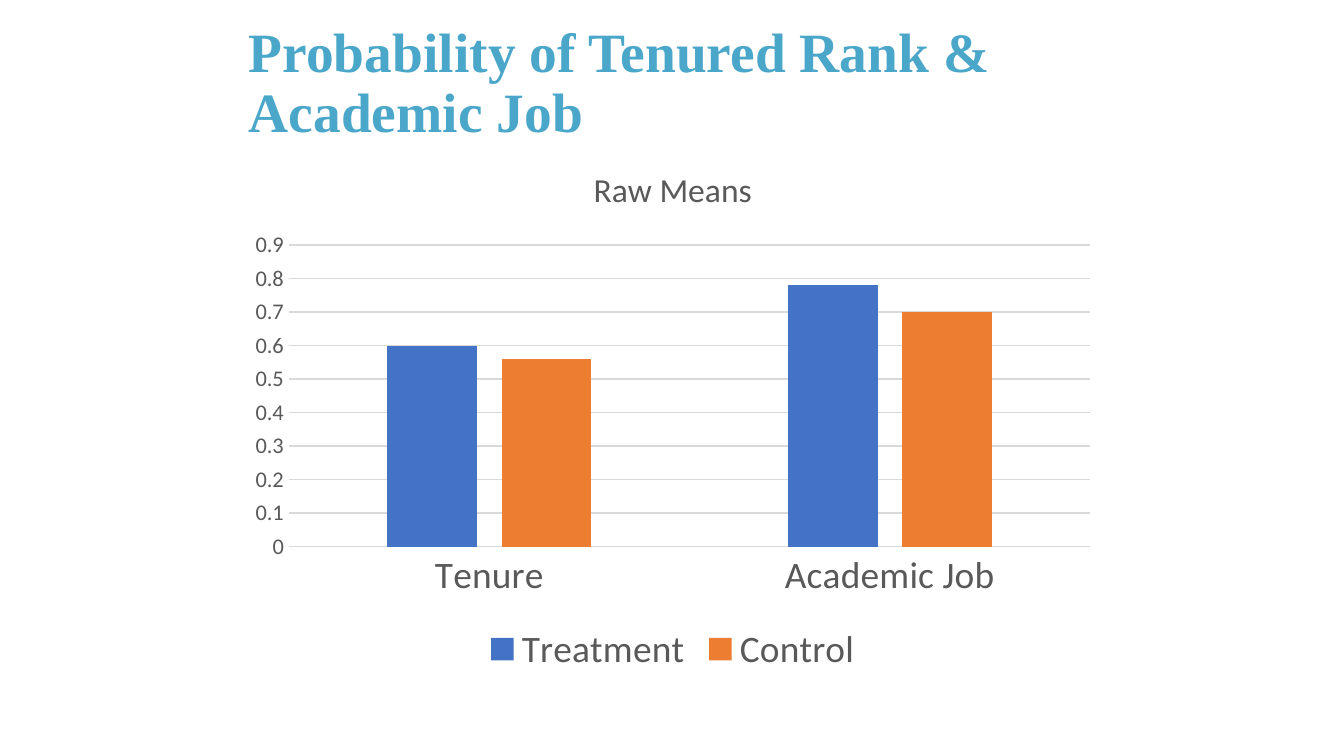
"""Build a slide comparing tenure and academic job rates by group."""
from dataclasses import dataclass

from pptx import Presentation
from pptx.chart.data import CategoryChartData
from pptx.dml.color import RGBColor
from pptx.enum.chart import XL_CHART_TYPE, XL_LEGEND_POSITION, XL_TICK_MARK
from pptx.enum.text import MSO_ANCHOR
from pptx.util import Cm, Pt

COLUMNS = XL_CHART_TYPE.COLUMN_CLUSTERED
BOTTOM = XL_LEGEND_POSITION.BOTTOM
NO_TICK = XL_TICK_MARK.NONE
MIDDLE = MSO_ANCHOR.MIDDLE

TITLE = "Probability of Tenured Rank & Academic Job"
CHART_TITLE = "Raw Means"
CATEGORIES = ["Tenure", "Academic Job"]
SERIES = [("Treatment", (0.6, 0.78)), ("Control", (0.56, 0.7))]

SLIDE_W, SLIDE_H = 25.4, 14.29
LEFT, WIDTH = 4.5, 16.43
TITLE_TOP, TITLE_H = 0.79, 1.63
CHART_TOP, CHART_H = 2.69, 10.16


@dataclass(frozen=True)
class Theme:
    heading_font: str = "Times New Roman"
    body_font: str = "Calibri"
    heading: str = "4BA7C9"
    text: str = "595959"
    rule: str = "D9D9D9"
    bars: tuple = ("4472C4", "ED7D31")
    heading_size: float = 29.7
    chart_title_size: float = 18
    label_size: float = 20
    value_size: float = 12
    rule_width: float = 0.75


THEME = Theme()


def style_font(font, name, size, color, bold=False):
    font.name, font.size, font.bold = name, Pt(size), bold
    font.color.rgb = RGBColor.from_string(color)


def style_body(font, size):
    style_font(font, THEME.body_font, size, THEME.text)


def style_rule(line):
    line.color.rgb = RGBColor.from_string(THEME.rule)
    line.width = Pt(THEME.rule_width)


def add_title(s):
    sp = s.shapes.add_textbox(Cm(LEFT), Cm(TITLE_TOP), Cm(WIDTH), Cm(TITLE_H))
    tf = sp.text_frame
    tf.word_wrap = True
    tf.vertical_anchor = MIDDLE
    tf.margin_left = tf.margin_right = Cm(0.2)
    tf.text = TITLE
    p = tf.paragraphs[0]
    p.line_spacing = 0.9
    style_font(p.runs[0].font, THEME.heading_font, THEME.heading_size,
               THEME.heading, True)


def add_means_chart(s):
    data = CategoryChartData()
    data.categories = CATEGORIES
    for name, values in SERIES:
        data.add_series(name, values)
    chart = s.shapes.add_chart(COLUMNS, Cm(LEFT), Cm(CHART_TOP), Cm(WIDTH),
                               Cm(CHART_H), data).chart
    style_body(chart.font, THEME.value_size)

    chart.has_title = True
    tf = chart.chart_title.text_frame
    tf.text = CHART_TITLE
    style_body(tf.paragraphs[0].runs[0].font, THEME.chart_title_size)
    chart.chart_title.include_in_layout = False

    chart.has_legend = True
    chart.legend.position = BOTTOM
    chart.legend.include_in_layout = False
    style_body(chart.legend.font, THEME.label_size)

    plot = chart.plots[0]
    plot.gap_width, plot.overlap = 219, -27
    plot.vary_by_categories = False
    for series, color in zip(plot.series, THEME.bars):
        series.format.fill.solid()
        series.format.fill.fore_color.rgb = RGBColor.from_string(color)

    cat, val = chart.category_axis, chart.value_axis
    for axis, size in ((cat, THEME.label_size), (val, THEME.value_size)):
        axis.major_tick_mark = axis.minor_tick_mark = NO_TICK
        style_body(axis.tick_labels.font, size)
    style_rule(cat.format.line)
    val.format.line.fill.background()
    val.has_major_gridlines = True
    style_rule(val.major_gridlines.format.line)
    val.minimum_scale, val.maximum_scale, val.major_unit = 0, 0.9, 0.1


def main():
    prs = Presentation()
    prs.slide_width, prs.slide_height = Cm(SLIDE_W), Cm(SLIDE_H)
    s = prs.slides.add_slide(prs.slide_layouts[6])
    add_title(s)
    add_means_chart(s)
    prs.save("out.pptx")


if __name__ == "__main__":
    main()
